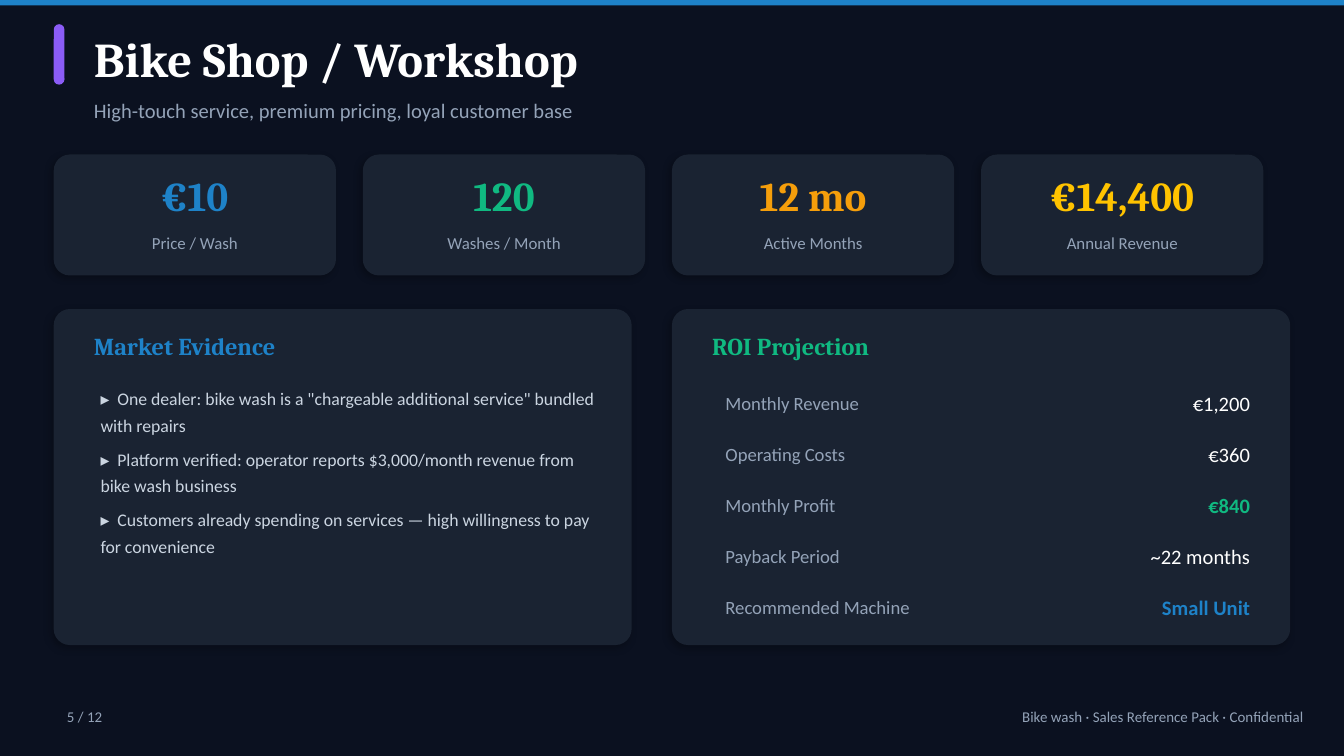
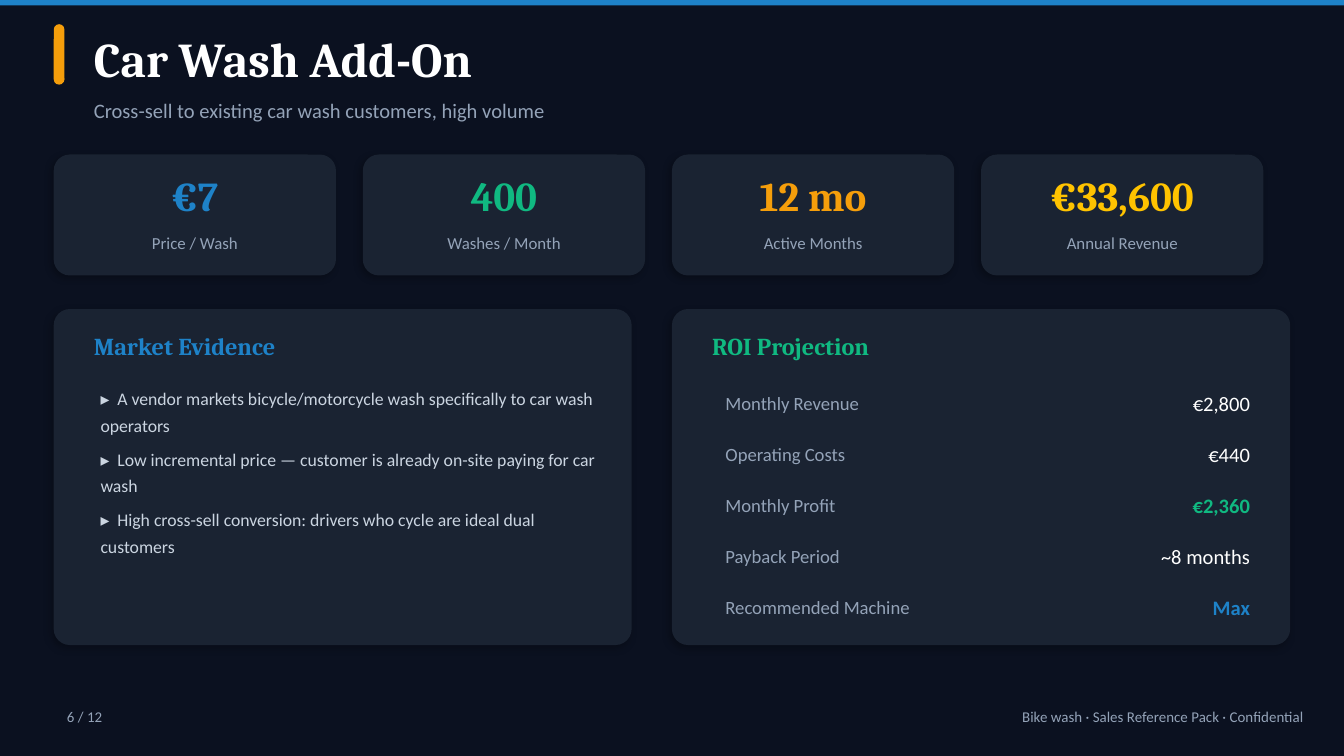
"""Build the two market segment slides of the sales reference pack."""
from dataclasses import dataclass

from lxml import etree
from pptx import Presentation
from pptx.dml.color import RGBColor
from pptx.enum import shapes, text
from pptx.oxml.ns import qn
from pptx.util import Pt

NAVY = RGBColor(0x0B, 0x11, 0x20)
CARD = RGBColor(0x1A, 0x23, 0x32)
WHITE = RGBColor(0xFF, 0xFF, 0xFF)
MUTED = RGBColor(0x94, 0xA3, 0xB8)
LIGHT = RGBColor(0xCB, 0xD5, 0xE1)
BLUE = RGBColor(0x1E, 0x82, 0xC8)
GREEN = RGBColor(0x10, 0xB9, 0x81)
AMBER = RGBColor(0xF5, 0x9E, 0x0B)
GOLD = RGBColor(0xFF, 0xC3, 0x00)
VIOLET = RGBColor(0x8B, 0x5C, 0xF6)

HEADING_FONT, BODY_FONT = "Cambria", "Calibri"
LEFT, CENTER, RIGHT = text.PP_ALIGN.LEFT, text.PP_ALIGN.CENTER, text.PP_ALIGN.RIGHT
TOP, MIDDLE = text.MSO_ANCHOR.TOP, text.MSO_ANCHOR.MIDDLE

PAGE_WIDTH, PAGE_HEIGHT = 720, 405
MARGIN = 28.8
CARD_RADIUS = 8.64
PAGE_TOTAL = 12
FOOTER = "Bike wash · Sales Reference Pack · Confidential"


@dataclass(frozen=True)
class Area:
    """A rectangle on the slide, in points."""
    left: float
    top: float
    width: float
    height: float

    def lengths(self) -> tuple[Pt, Pt, Pt, Pt]:
        """Return the four lengths in the order that shapes expect."""
        return Pt(self.left), Pt(self.top), Pt(self.width), Pt(self.height)


@dataclass(frozen=True)
class Style:
    """The look of one line of text."""
    size: float
    color: RGBColor
    font: str = BODY_FONT
    bold: bool = False
    align: text.PP_ALIGN = LEFT


@dataclass(frozen=True)
class Segment:
    """The content of one market segment slide."""
    number: int
    accent: RGBColor
    title: str
    subtitle: str
    metrics: tuple[str, ...]
    evidence: tuple[str, ...]
    projection: tuple[str, ...]


METRICS = (("Price / Wash", BLUE), ("Washes / Month", GREEN),
           ("Active Months", AMBER), ("Annual Revenue", GOLD))
PROJECTION = (
    ("Monthly Revenue", Style(11, WHITE, align=RIGHT)),
    ("Operating Costs", Style(11, WHITE, align=RIGHT)),
    ("Monthly Profit", Style(11, GREEN, bold=True, align=RIGHT)),
    ("Payback Period", Style(11, WHITE, align=RIGHT)),
    ("Recommended Machine", Style(11, BLUE, bold=True, align=RIGHT)),
)
SEGMENTS = (
    Segment(
        5, VIOLET, "Bike Shop / Workshop",
        "High-touch service, premium pricing, loyal customer base",
        ("€10", "120", "12 mo", "€14,400"),
        ('One dealer: bike wash is a "chargeable additional service" bundled with repairs',
         "Platform verified: operator reports $3,000/month revenue from bike wash business",
         "Customers already spending on services — high willingness to pay for convenience"),
        ("€1,200", "€360", "€840", "~22 months", "Small Unit"),
    ),
    Segment(
        6, AMBER, "Car Wash Add-On",
        "Cross-sell to existing car wash customers, high volume",
        ("€7", "400", "12 mo", "€33,600"),
        ("A vendor markets bicycle/motorcycle wash specifically to car wash operators",
         "Low incremental price — customer is already on-site paying for car wash",
         "High cross-sell conversion: drivers who cycle are ideal dual customers"),
        ("€2,800", "€440", "€2,360", "~8 months", "Max"),
    ),
)


def add_block(page, area: Area, color: RGBColor, radius: float = 0):
    """Add a plain filled rectangle, rounded when a radius is given."""
    kind = shapes.MSO_SHAPE.ROUNDED_RECTANGLE if radius else shapes.MSO_SHAPE.RECTANGLE
    block = page.shapes.add_shape(kind, *area.lengths())
    if radius:
        block.adjustments[0] = radius / min(area.width, area.height)
    block.shadow.inherit = False
    block.fill.solid()
    block.fill.fore_color.rgb = color
    block.line.fill.background()
    return block


def add_card(page, area: Area) -> None:
    """Add a rounded card with a soft shadow."""
    card = add_block(page, area, CARD, CARD_RADIUS)
    effects = card.element.spPr.find(qn("a:effectLst"))
    shadow = etree.SubElement(effects, qn("a:outerShdw"), blurRad=str(Pt(4)),
                              dist=str(Pt(2)), dir=str(135 * 60000),
                              algn="bl", rotWithShape="0")
    color = etree.SubElement(shadow, qn("a:srgbClr"), val="000000")
    etree.SubElement(color, qn("a:alpha"), val="25000")


def add_label(page, area: Area, words: str, style: Style,
              anchor: text.MSO_ANCHOR = MIDDLE):
    """Add one styled paragraph in a wrapping box and return the paragraph."""
    frame = page.shapes.add_textbox(*area.lengths()).text_frame
    frame.word_wrap = True
    frame.vertical_anchor = anchor
    frame.text = words
    para = frame.paragraphs[0]
    para.alignment = style.align
    for span in para.runs:
        span.font.name = style.font
        span.font.size = Pt(style.size)
        span.font.bold = style.bold
        span.font.color.rgb = style.color
    return para


def add_bullet(page, area: Area, words: str) -> None:
    """Add an arrow-marked statement whose second line returns to the margin."""
    para = add_label(page, area, f"▸\t{words}", Style(9.5, LIGHT), TOP)
    para.line_spacing = 1.25
    stops = etree.SubElement(para._p.get_or_add_pPr(), qn("a:tabLst"))
    etree.SubElement(stops, qn("a:tab"), pos=str(Pt(9)), algn="l")


def add_frame(page, segment: Segment) -> None:
    """Add the background, top band, footer and title of a slide."""
    page.background.fill.solid()
    page.background.fill.fore_color.rgb = NAVY
    add_block(page, Area(0, 0, PAGE_WIDTH, 2.88), BLUE)
    add_label(page, Area(MARGIN, 372.96, 86.4, 21.6),
              f"{segment.number} / {PAGE_TOTAL}", Style(8, MUTED))
    add_label(page, Area(360, 372.96, 345.6, 21.6), FOOTER,
              Style(8, MUTED, align=RIGHT))
    add_block(page, Area(MARGIN, 12.96, 5.76, 32.4), segment.accent, 2.88)
    add_label(page, Area(43.2, 12.96, 432, 36), segment.title,
              Style(26, WHITE, HEADING_FONT, True))
    add_label(page, Area(43.2, 48.96, 432, 20.16), segment.subtitle, Style(11, MUTED))


def add_metrics(page, values: tuple[str, ...]) -> None:
    """Add the row of key figure cards."""
    width, gap = 151.2, 14.4
    for index, ((name, color), value) in enumerate(zip(METRICS, values)):
        left = MARGIN + index * (width + gap)
        add_card(page, Area(left, 82.8, width, 64.8))
        add_label(page, Area(left, 88.56, width, 32.4), value,
                  Style(22, color, HEADING_FONT, True, CENTER))
        add_label(page, Area(left, 117.36, width, 25.2), name,
                  Style(9, MUTED, align=CENTER))


def add_panel(page, left: float, width: float, heading_width: float,
              heading: str, color: RGBColor) -> None:
    """Add a large card with its heading."""
    add_card(page, Area(left, 165.6, width, 180))
    add_label(page, Area(left + 14.4, 172.8, heading_width, 25.2), heading,
              Style(13, color, HEADING_FONT, True))


def add_evidence(page, statements: tuple[str, ...]) -> None:
    """Add the market evidence panel."""
    add_panel(page, MARGIN, 309.6, 288, "Market Evidence", BLUE)
    for index, statement in enumerate(statements):
        add_bullet(page, Area(46.8, 201.6 + index * 32.4, 280.8, 30.24), statement)


def add_projection(page, values: tuple[str, ...]) -> None:
    """Add the return on investment panel."""
    add_panel(page, 360, 331.2, 302.4, "ROI Projection", GREEN)
    for index, ((name, style), value) in enumerate(zip(PROJECTION, values)):
        top = 205.2 + index * 27.36
        add_label(page, Area(381.6, top, 158.4, 21.6), name, Style(10, MUTED))
        add_label(page, Area(540, top, 136.8, 21.6), value, style)


def main() -> None:
    """Build and save the deck."""
    deck = Presentation()
    deck.slide_width, deck.slide_height = Pt(PAGE_WIDTH), Pt(PAGE_HEIGHT)
    for segment in SEGMENTS:
        page = deck.slides.add_slide(deck.slide_layouts[6])
        add_frame(page, segment)
        add_metrics(page, segment.metrics)
        add_evidence(page, segment.evidence)
        add_projection(page, segment.projection)
    deck.save("out.pptx")


if __name__ == "__main__":
    main()
